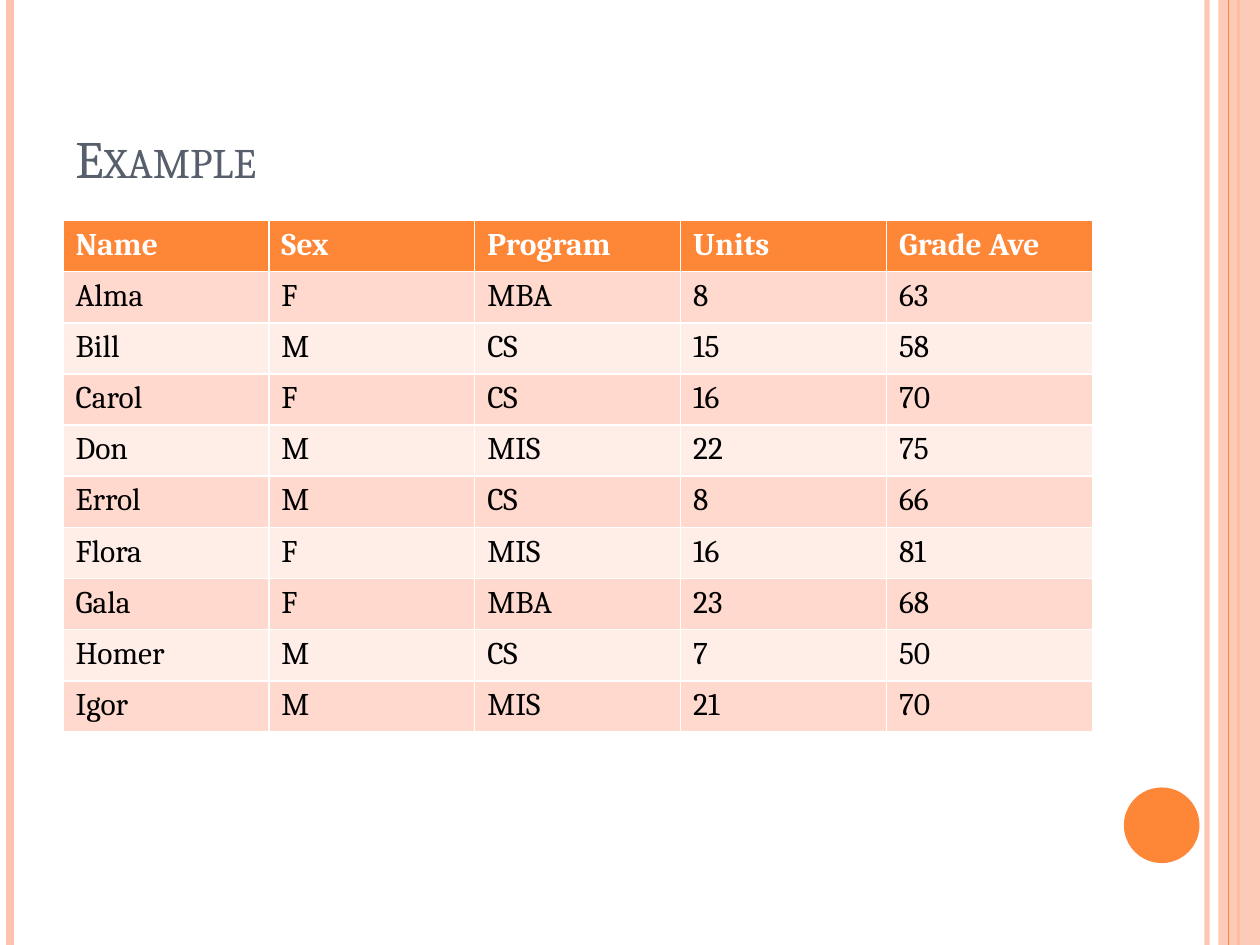
from pptx import Presentation
from pptx.dml.color import RGBColor
from pptx.enum.shapes import MSO_CONNECTOR, MSO_SHAPE
from pptx.enum.text import MSO_ANCHOR
from pptx.oxml.xmlchemy import OxmlElement
from pptx.util import Inches, Pt


def paint(fmt, color, alpha=100):
    fmt.solid()
    fmt.fore_color.rgb = RGBColor.from_string(color)
    if alpha < 100:
        a = OxmlElement("a:alpha")
        a.set("val", str(alpha * 1000))
        fmt.fore_color._xFill[0].append(a)


def write(tf, text, color, **font):
    r = tf.paragraphs[0].add_run()
    r.text = text
    r.font.name = "Cambria"
    r.font.color.rgb = RGBColor.from_string(color)
    for key, value in font.items():
        setattr(r.font, key, value)
    return r


ORANGE, PEACH = "FE8637", "FEC3AE"

prs = Presentation()
prs.slide_width, prs.slide_height = Inches(10), Inches(7.5)
s = prs.slides.add_slide(prs.slide_layouts[6])

stripes = [
    ("line", 9.58, 3, PEACH, 93),
    ("line", 0.08, 4.5, PEACH, 100),
    ("line", 9.83, 1.5, ORANGE, 100),
    ("band", 9.67, 0.33, PEACH, 87),
    ("line", 9.75, 0.75, ORANGE, 100),
]
for kind, x, width, color, alpha in stripes:
    if kind == "line":
        sp = s.shapes.add_connector(MSO_CONNECTOR.STRAIGHT, Inches(x), 0, Inches(x), Inches(7.5))
        sp.line.width = Pt(width)
        paint(sp.line.fill, color, alpha)
        sp._element.spPr.append(OxmlElement("a:effectLst"))
    else:
        sp = s.shapes.add_shape(MSO_SHAPE.RECTANGLE, Inches(x), 0, Inches(width), Inches(7.5))
        sp.shadow.inherit = False
        paint(sp.fill, color, alpha)
        sp.line.fill.background()

sp = s.shapes.add_shape(MSO_SHAPE.OVAL, Inches(8.92), Inches(6.25), Inches(0.6), Inches(0.6))
sp.shadow.inherit = False
paint(sp.fill, ORANGE)
sp.line.fill.background()

tf = s.shapes.add_textbox(Inches(0.5), Inches(0.3), Inches(8.17), Inches(1.25)).text_frame
tf.word_wrap = True
tf.vertical_anchor = MSO_ANCHOR.BOTTOM
r = write(tf, "Example", "575F6D", size=Pt(30))
r.font._element.set("cap", "small")

rows = [
    ("Name", "Sex", "Program", "Units", "Grade Ave"),
    ("Alma", "F", "MBA", "8", "63"),
    ("Bill", "M", "CS", "15", "58"),
    ("Carol", "F", "CS", "16", "70"),
    ("Don", "M", "MIS", "22", "75"),
    ("Errol", "M", "CS", "8", "66"),
    ("Flora", "F", "MIS", "16", "81"),
    ("Gala", "F", "MBA", "23", "68"),
    ("Homer", "M", "CS", "7", "50"),
    ("Igor", "M", "MIS", "21", "70"),
]
table = s.shapes.add_table(
    len(rows), len(rows[0]), Inches(0.5), Inches(1.75), Inches(8.17), Inches(4.06)
).table
for i, row in enumerate(rows):
    header = i == 0
    fill = ORANGE if header else ("FFEDE8", "FFD9CE")[i % 2]
    for j, text in enumerate(row):
        cell = table.cell(i, j)
        paint(cell.fill, fill)
        write(cell.text_frame, text, "FFFFFF" if header else "000000", size=Pt(18), bold=header)

prs.save("out.pptx")
